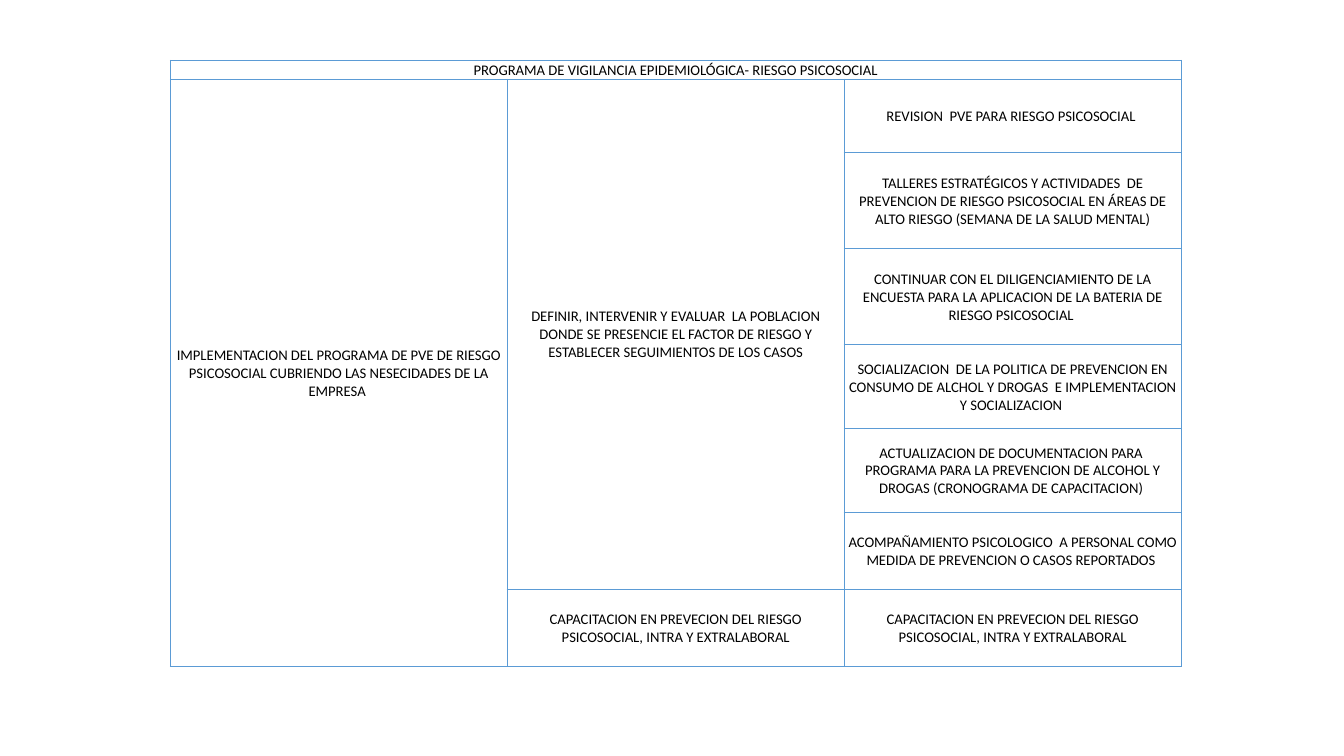
import pptx
import pptx.dml.color
import pptx.enum.text
import pptx.oxml.ns
import pptx.util
from lxml import etree

Pt = pptx.util.Pt

TITLE = "PROGRAMA DE VIGILANCIA EPIDEMIOLÓGICA- RIESGO PSICOSOCIAL"
GOAL = ("IMPLEMENTACION DEL PROGRAMA DE PVE DE RIESGO PSICOSOCIAL CUBRIENDO "
        "LAS NESECIDADES DE LA EMPRESA ")
STRATEGY = ("DEFINIR, INTERVENIR Y EVALUAR  LA POBLACION DONDE SE PRESENCIE EL "
            "FACTOR DE RIESGO Y ESTABLECER SEGUIMIENTOS DE LOS CASOS")
TRAINING = "CAPACITACION EN PREVECION DEL RIESGO PSICOSOCIAL, INTRA Y EXTRALABORAL"
ACTIVITIES = [
    "REVISION  PVE PARA RIESGO PSICOSOCIAL ",
    "TALLERES ESTRATÉGICOS Y ACTIVIDADES  DE PREVENCION DE RIESGO PSICOSOCIAL "
    "EN ÁREAS DE ALTO RIESGO (SEMANA DE LA SALUD MENTAL)",
    "CONTINUAR CON EL DILIGENCIAMIENTO DE LA ENCUESTA PARA LA APLICACION DE LA "
    "BATERIA DE RIESGO PSICOSOCIAL ",
    "SOCIALIZACION  DE LA POLITICA DE PREVENCION EN CONSUMO DE ALCHOL Y DROGAS  "
    "E IMPLEMENTACION Y SOCIALIZACION ",
    "ACTUALIZACION DE DOCUMENTACION PARA  PROGRAMA PARA LA PREVENCION DE ALCOHOL "
    "Y DROGAS (CRONOGRAMA DE CAPACITACION) ",
    "ACOMPAÑAMIENTO PSICOLOGICO  A PERSONAL COMO MEDIDA DE PREVENCION O CASOS "
    "REPORTADOS ",
    TRAINING,
]
COL_WIDTHS = [240.7] * 3
ROW_HEIGHTS = [12.5, 52.5, 68.6, 68.6, 59.8, 59.8, 55, 55.4]


def rgb(hex_color):
    return pptx.dml.color.RGBColor.from_string(hex_color)


class SlideBuilder:
    font = "Calibri"
    size = 10.5
    text_color = "000000"
    border_color = "5B9BD5"
    border_width = 1

    def __init__(self, prs):
        self.slide = prs.slides.add_slide(prs.slide_layouts[6])

    def table(self, left, top, widths, heights):
        """Add an empty, unfilled table with a border around every cell."""
        frame = self.slide.shapes.add_table(
            len(heights), len(widths), Pt(left), Pt(top),
            Pt(sum(widths)), Pt(sum(heights)))
        table = frame.table
        table.first_row = table.horz_banding = False
        for column, width in zip(table.columns, widths):
            column.width = Pt(width)
        for row, height in zip(table.rows, heights):
            row.height = Pt(height)
        for cell in table.iter_cells():
            self.borders(cell)
            cell.fill.background()
            cell.margin_left = cell.margin_right = cell.margin_top = Pt(0.7)
            cell.margin_bottom = 0
            cell.vertical_anchor = pptx.enum.text.MSO_ANCHOR.MIDDLE
            cell.text_frame.paragraphs[0].font.size = Pt(self.size)
        return table

    def borders(self, cell):
        qn = pptx.oxml.ns.qn
        tc_pr = cell._tc.get_or_add_tcPr()
        for side in "LRTB":
            ln = etree.SubElement(tc_pr, qn("a:ln" + side),
                                  w=str(Pt(self.border_width)))
            fill = etree.SubElement(ln, qn("a:solidFill"))
            etree.SubElement(fill, qn("a:srgbClr"), val=self.border_color)

    def cell_text(self, cell, text):
        p = cell.text_frame.paragraphs[0]
        p.alignment = pptx.enum.text.PP_ALIGN.CENTER
        r = p.add_run()
        r.text = text
        r.font.name = self.font
        r.font.size = Pt(self.size)
        r.font.color.rgb = rgb(self.text_color)


def main():
    prs = pptx.Presentation()
    prs.slide_width, prs.slide_height = Pt(960), Pt(540)
    s = SlideBuilder(prs)
    table = s.table(121.7, 43.2, COL_WIDTHS, ROW_HEIGHTS)

    last = len(ROW_HEIGHTS) - 1
    table.cell(0, 0).merge(table.cell(0, 2))
    table.cell(1, 0).merge(table.cell(last, 0))
    table.cell(1, 1).merge(table.cell(last - 1, 1))

    s.cell_text(table.cell(0, 0), TITLE)
    s.cell_text(table.cell(1, 0), GOAL)
    s.cell_text(table.cell(1, 1), STRATEGY)
    s.cell_text(table.cell(last, 1), TRAINING)
    for row, activity in enumerate(ACTIVITIES, start=1):
        s.cell_text(table.cell(row, 2), activity)

    prs.save("out.pptx")


if __name__ == "__main__":
    main()
